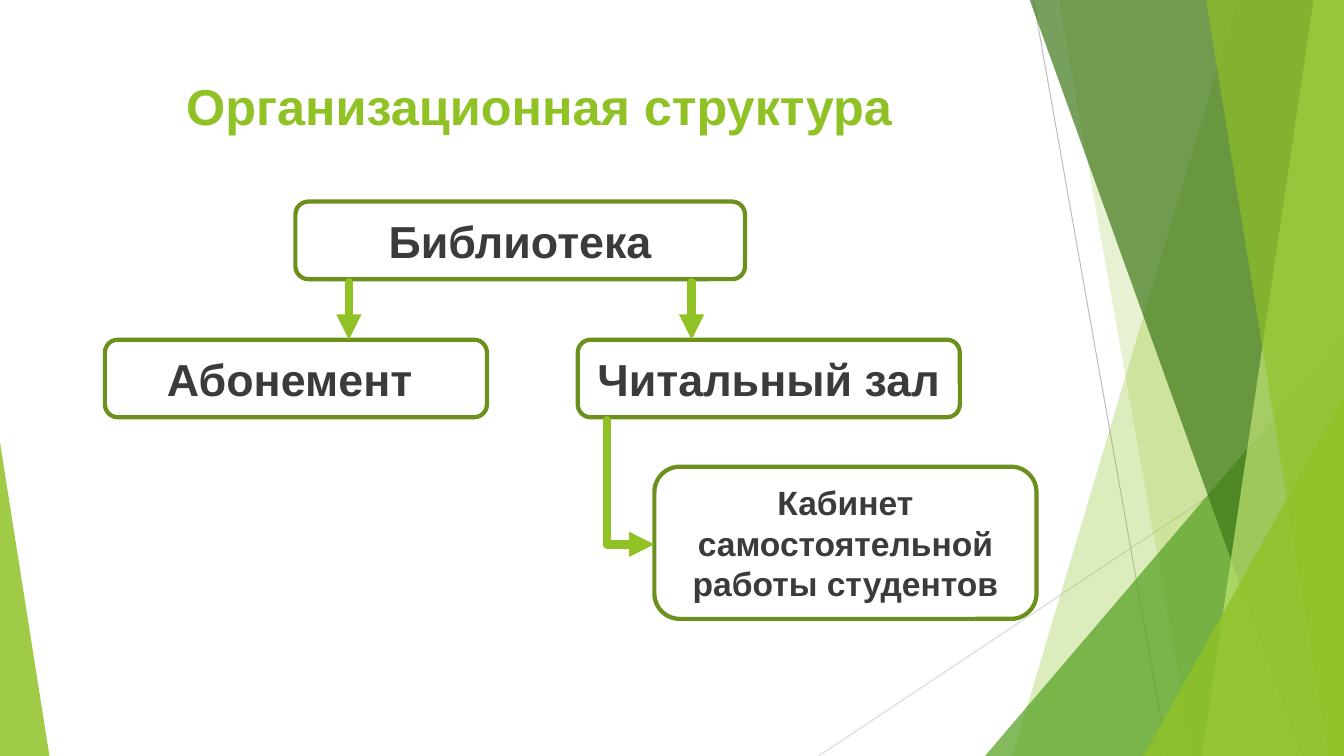
import dataclasses
import typing

import lxml.etree
import pptx
import pptx.dml.color
import pptx.enum.shapes
import pptx.enum.text
import pptx.oxml.ns
import pptx.util

PX = 9144
SLIDE_W, SLIDE_H = 1333, 750

RGBColor = pptx.dml.color.RGBColor
GREEN = RGBColor(0x90, 0xC2, 0x26)
MID_GREEN = RGBColor(0x54, 0xA0, 0x21)
DARK_GREEN = RGBColor(0x3F, 0x78, 0x19)
PALE_GREEN = RGBColor(0xC0, 0xE4, 0x74)
BORDER_GREEN = RGBColor(0x6B, 0x90, 0x1C)
INK = RGBColor(0x3B, 0x3B, 0x3B)
WHITE = RGBColor(0xFF, 0xFF, 0xFF)
GRAY = RGBColor(0xBF, 0xBF, 0xBF)
LIGHT_GRAY = RGBColor(0xD9, 0xD9, 0xD9)

Shape = pptx.enum.shapes.MSO_SHAPE
Anchor = pptx.enum.text.MSO_ANCHOR


@dataclasses.dataclass(frozen=True)
class Band:
    top_left: int
    bottom_left: int
    bottom_right: int
    color: RGBColor
    opacity: int


@dataclasses.dataclass(frozen=True)
class Wedge:
    left: int
    top: int
    width: int
    apex: int
    color: RGBColor
    opacity: int


@dataclasses.dataclass(frozen=True)
class Box:
    text: str
    left: int
    top: int
    width: int
    height: int = 77
    size: int = 32


@dataclasses.dataclass(frozen=True)
class Line:
    x1: int
    y1: int
    x2: int
    y2: int
    color: RGBColor = GREEN
    width: float = 6
    arrow: bool = True
    cap: str = "rnd"


HAIRLINES = [
    Line(1025, 0, 1158, 750, GRAY, 0.75, False, "flat"),
    Line(1333, 403, 812, 750, LIGHT_GRAY, 0.75, False, "flat"),
]
DECOR = [
    Band(1228, 1004, SLIDE_W, GREEN, 30),
    Band(1050, 1183, SLIDE_W, GREEN, 20),
    Wedge(977, 333, 356, 1, MID_GREEN, 72),
    Band(1021, 1291, SLIDE_W, DARK_GREEN, 70),
    Band(1303, 1192, SLIDE_W, PALE_GREEN, 70),
    Band(1196, 1318, SLIDE_W, GREEN, 65),
    Wedge(1134, 393, 199, 1, GREEN, 80),
    Wedge(0, 439, 49, 0, GREEN, 85),
]
BOXES = [
    Box("Библиотека", 293, 200, 446),
    Box("Абонемент ", 104, 337, 379),
    Box("Читальный зал", 573, 337, 379),
    Box("Кабинет самостоятельной работы студентов", 649, 463, 379, 151, 24),
]
ARROWS = [
    Line(346, 280, 346, 337),
    Line(686, 280, 686, 337),
    Line(602, 417, 602, 540, arrow=False),
    Line(602, 540, 649, 540),
]


def px(*values: int) -> list[pptx.util.Emu]:
    return [pptx.util.Emu(v * PX) for v in values]


def sub(parent: typing.Any, tag: str, **attrs: str) -> None:
    lxml.etree.SubElement(parent, pptx.oxml.ns.qn(tag), attrs)


def write_text(s: typing.Any, text: str, *, size: int, color: RGBColor,
               anchor: Anchor = Anchor.MIDDLE, margin_top: int = 5) -> None:
    tf = s.text_frame
    tf.word_wrap = True
    tf.vertical_anchor = anchor
    tf.margin_top = px(margin_top)[0]
    p = tf.paragraphs[0]
    p.alignment = pptx.enum.text.PP_ALIGN.CENTER
    r = p.add_run()
    r.text = text
    r.font.name = "Arial"
    r.font.size = pptx.util.Pt(size)
    r.font.bold = True
    r.font.color.rgb = color


def paint(s: typing.Any, color: RGBColor, opacity: int) -> None:
    s.shadow.inherit = False
    s.line.fill.background()
    s.fill.solid()
    s.fill.fore_color.rgb = color
    clr = s.fill._xPr.find(".//" + pptx.oxml.ns.qn("a:srgbClr"))
    sub(clr, "a:alpha", val=str(opacity * 1000))


def draw_band(shapes: typing.Any, band: Band) -> None:
    builder = shapes.build_freeform(band.top_left, -1, scale=PX)
    builder.add_line_segments([
        (SLIDE_W, -1), (band.bottom_right, SLIDE_H), (band.bottom_left, SLIDE_H),
    ], close=True)
    paint(builder.convert_to_shape(), band.color, band.opacity)


def draw_wedge(shapes: typing.Any, wedge: Wedge) -> None:
    s = shapes.add_shape(Shape.ISOSCELES_TRIANGLE, *px(
        wedge.left, wedge.top, wedge.width, SLIDE_H - wedge.top))
    s.adjustments[0] = wedge.apex
    paint(s, wedge.color, wedge.opacity)


def draw_box(shapes: typing.Any, box: Box) -> None:
    s = shapes.add_shape(Shape.ROUNDED_RECTANGLE, *px(
        box.left, box.top, box.width, box.height))
    s.shadow.inherit = False
    s.fill.solid()
    s.fill.fore_color.rgb = WHITE
    s.line.color.rgb = BORDER_GREEN
    s.line.width = pptx.util.Pt(3)
    write_text(s, box.text, size=box.size, color=INK)


def draw_line(shapes: typing.Any, line: Line) -> None:
    s = shapes.add_connector(pptx.enum.shapes.MSO_CONNECTOR.STRAIGHT,
                             *px(line.x1, line.y1, line.x2, line.y2))
    s.line.color.rgb = line.color
    s.line.width = pptx.util.Pt(line.width)
    ln = s.line._get_or_add_ln()
    ln.set("cap", line.cap)
    if line.arrow:
        sub(ln, "a:tailEnd", type="triangle")
    sub(s._element.spPr, "a:effectLst")


def main() -> None:
    prs = pptx.Presentation()
    prs.slide_width, prs.slide_height = px(SLIDE_W, SLIDE_H)
    shapes = prs.slides.add_slide(prs.slide_layouts[6]).shapes
    for line in HAIRLINES:
        draw_line(shapes, line)
    for part in DECOR:
        if isinstance(part, Band):
            draw_band(shapes, part)
        else:
            draw_wedge(shapes, part)
    title = shapes.add_textbox(*px(65, 65, 940, 96))
    write_text(title, "Организационная структура", size=36, color=GREEN,
               anchor=Anchor.TOP, margin_top=10)
    for box in BOXES:
        draw_box(shapes, box)
    for line in ARROWS:
        draw_line(shapes, line)
    prs.save("out.pptx")


if __name__ == "__main__":
    main()
